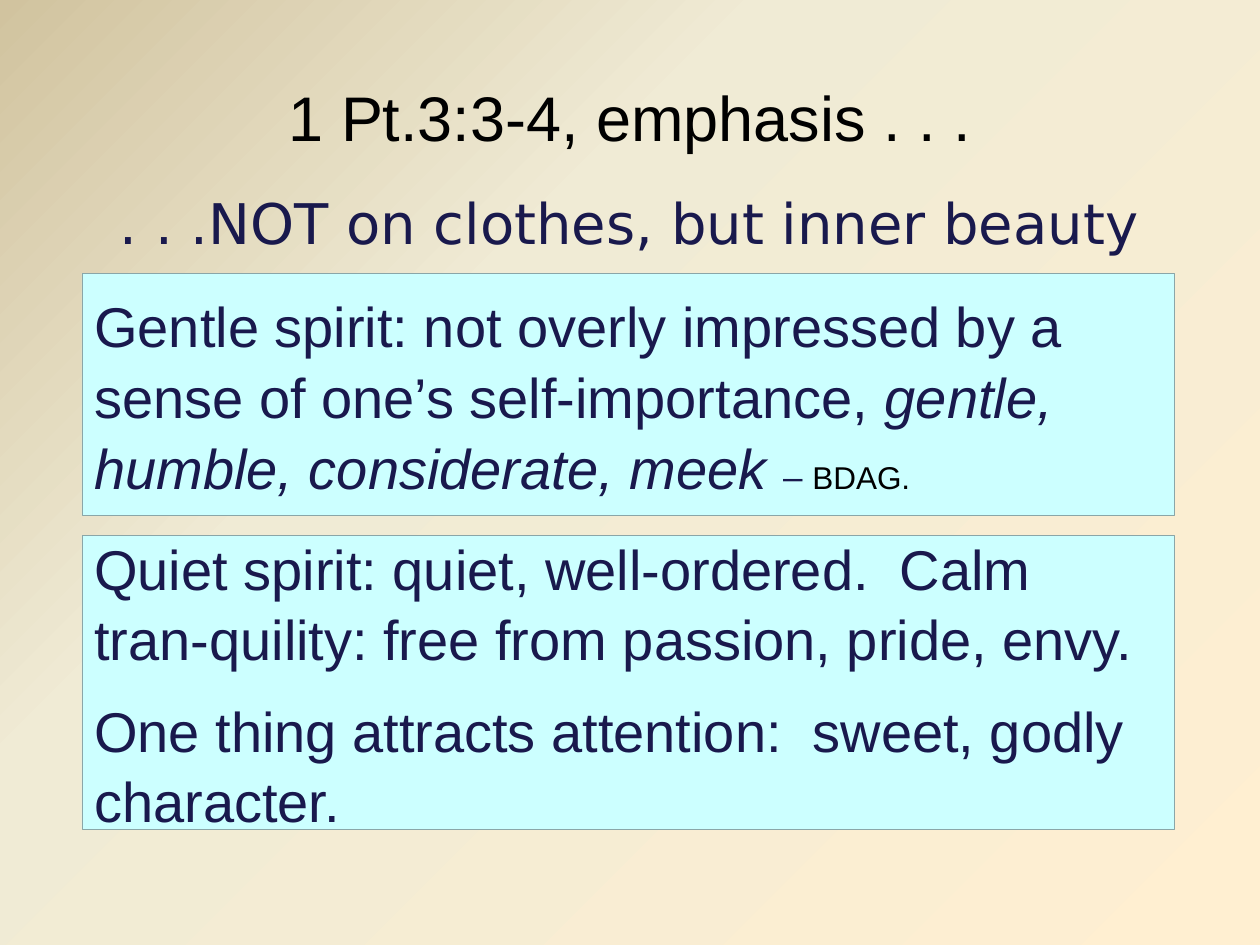
from copy import deepcopy
from dataclasses import dataclass

from pptx import Presentation
from pptx.dml.color import RGBColor
from pptx.enum.shapes import MSO_SHAPE
from pptx.enum.text import MSO_ANCHOR, MSO_AUTO_SIZE, PP_ALIGN
from pptx.oxml.ns import qn
from pptx.util import Inches, Pt

RECTANGLE = MSO_SHAPE.RECTANGLE
MIDDLE = MSO_ANCHOR.MIDDLE
NO_AUTOFIT = MSO_AUTO_SIZE.NONE
CENTER = PP_ALIGN.CENTER
LEFT = PP_ALIGN.LEFT


@dataclass(frozen=True)
class Theme:
    """Colours, fonts and type sizes of the slide."""
    gradient: tuple = ((0, "D1C39F"), (0.35, "F0EBD5"), (1, "FFEFD1"))
    black: str = "000000"
    navy: str = "19194D"
    panel_fill: str = "CCFFFF"
    panel_line: str = "8AA6A8"
    font: str = "Arial"
    subtitle_font: str = "DejaVu Sans"
    title_size: int = 36
    text_size: int = 32
    dash_size: int = 20
    source_size: int = 18
    line_spacing: float = 1.05


THEME = Theme()


def style_run(run, size=THEME.text_size, color=THEME.navy, name=THEME.font, italic=False):
    """Format one run of text."""
    run.font.size = Pt(size)
    run.font.color.rgb = RGBColor.from_string(color)
    run.font.name = name
    run.font.italic = italic


def place(shape, box):
    """Move a shape to a box of left, top, width and height in inches."""
    shape.left, shape.top, shape.width, shape.height = map(Inches, box)


def paint_background(slide):
    """Fill the background with a diagonal gradient of three stops."""
    fill = slide.background.fill
    fill.gradient()
    fill.gradient_angle = 315
    stop_list = slide.element.find(".//" + qn("a:gsLst"))
    stop_list.append(deepcopy(stop_list[0]))
    for stop, (position, color) in zip(fill.gradient_stops, THEME.gradient):
        stop.position = position
        stop.color.rgb = RGBColor.from_string(color)


def fill_title(title, box, text):
    """Place and format the title."""
    place(title, box)
    frame = title.text_frame
    frame.text = text
    frame.auto_size = NO_AUTOFIT
    frame.vertical_anchor = MIDDLE
    paragraph = frame.paragraphs[0]
    paragraph.alignment = CENTER
    style_run(paragraph.runs[0], THEME.title_size, THEME.black)


def fill_subtitle(body, box, text):
    """Place the body as one centred line without a bullet."""
    place(body, box)
    frame = body.text_frame
    frame.text = text
    frame.auto_size = NO_AUTOFIT
    paragraph = frame.paragraphs[0]
    paragraph.alignment = CENTER
    paragraph.space_after = Pt(6)
    paragraph.line_spacing = THEME.line_spacing
    properties = paragraph._p.get_or_add_pPr()
    properties.set("marL", "0")
    properties.set("indent", "0")
    properties.append(properties.makeelement(qn("a:buNone"), {}))
    style_run(paragraph.runs[0], name=THEME.subtitle_font)


def add_panel(slide, box, paragraphs):
    """Add a filled panel whose paragraphs are lists of text and style pairs."""
    panel = slide.shapes.add_shape(RECTANGLE, *map(Inches, box))
    panel.shadow.inherit = False
    panel.fill.solid()
    panel.fill.fore_color.rgb = RGBColor.from_string(THEME.panel_fill)
    panel.line.color.rgb = RGBColor.from_string(THEME.panel_line)
    panel.line.width = Pt(0.25)
    frame = panel.text_frame
    frame.word_wrap = True
    frame.vertical_anchor = MIDDLE
    for index, pieces in enumerate(paragraphs):
        paragraph = frame.add_paragraph() if index else frame.paragraphs[0]
        paragraph.alignment = LEFT
        paragraph.line_spacing = THEME.line_spacing
        paragraph.space_after = Pt(12 if index < len(paragraphs) - 1 else 0)
        for text, style in pieces:
            run = paragraph.add_run()
            run.text = text
            style_run(run, **style)


def build_slide(presentation):
    """Build the slide on the two virtues."""
    slide = presentation.slides.add_slide(presentation.slide_layouts[1])
    paint_background(slide)
    fill_title(slide.shapes.title, (0.5, 0.3, 9, 1.25), "1 Pt.3:3-4, emphasis . . .")
    fill_subtitle(slide.placeholders[1], (0.5, 1.42, 9, 5.75),
                  ". . .NOT on clothes, but inner beauty")
    add_panel(slide, (0.65, 2.17, 8.67, 1.92), [[
        ("Gentle spirit: not overly impressed by a sense of one’s self-importance, ", {}),
        ("gentle, humble, considerate, meek ", {"italic": True}),
        ("– ", {"size": THEME.dash_size}),
        ("BDAG.", {"size": THEME.source_size, "color": THEME.black}),
    ]])
    add_panel(slide, (0.65, 4.25, 8.67, 2.33), [
        [("Quiet spirit: quiet, well-ordered.  Calm tran-quility: "
          "free from passion, pride, envy.", {})],
        [("One thing attracts attention:  sweet, godly character.", {}),
         (" ", {"size": THEME.source_size})],
    ])


def main():
    """Create and save the presentation."""
    presentation = Presentation()
    presentation.slide_width = Inches(10)
    presentation.slide_height = Inches(7.5)
    build_slide(presentation)
    presentation.save("out.pptx")


if __name__ == "__main__":
    main()
